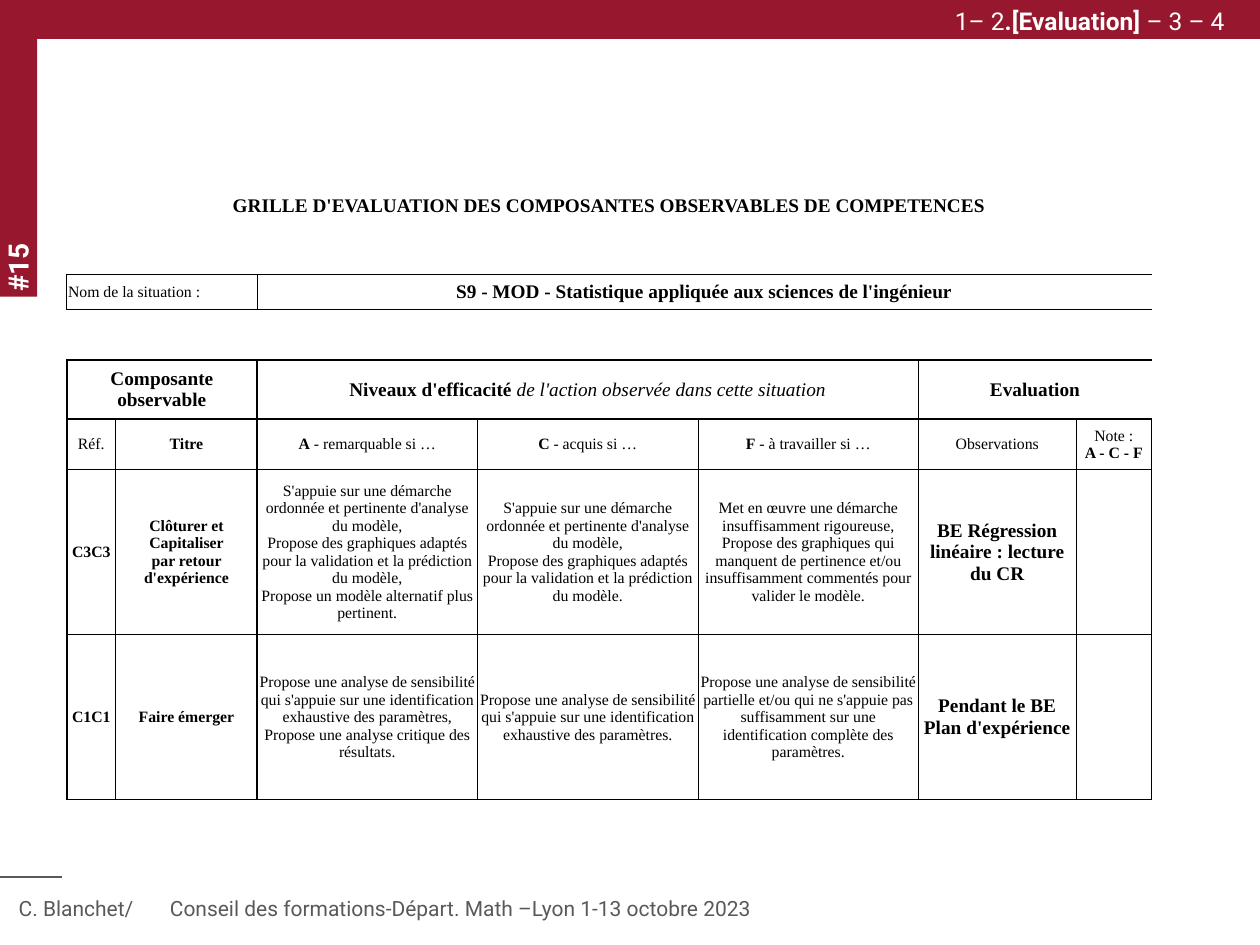
from pptx import Presentation
from pptx.dml.color import RGBColor
from pptx.enum.shapes import MSO_CONNECTOR as Line, MSO_SHAPE as Shape
from pptx.enum.text import MSO_ANCHOR as Anchor, PP_ALIGN as Align
from pptx.oxml import parse_xml
from pptx.oxml.ns import nsdecls
from pptx.util import Inches, Pt
from lxml.etree import SubElement

RED = RGBColor(0x96, 0x17, 0x2E)
GREY = RGBColor(0x59, 0x59, 0x59)
WHITE = RGBColor(0xFF, 0xFF, 0xFF)
BLACK = RGBColor(0, 0, 0)
SANS, SERIF = "Roboto", "Times New Roman"
THIN, THICK = 0.5, 0.96

# The slide is a grid of 100 columns by 75 rows
deck = Presentation()
deck.slide_width, deck.slide_height = Inches(10), Inches(7.5)
unit = deck.slide_width / 100
slide = deck.slides.add_slide(deck.slide_layouts[6])
shapes = slide.shapes


def grid(*spots):
    return [round(spot * unit) for spot in spots]


def write(para, runs, size, face, color):
    """Add (text, style) runs; style holds b for bold and i for italic."""
    for text, style in runs:
        for num, part in enumerate(text.split("\n")):
            if num:
                para.add_line_break()
            if not part:
                continue
            run = para.add_run()
            run.text = part
            font = run.font
            font.size, font.name = Pt(size), face
            font.color.rgb = color
            font.bold, font.italic = "b" in style, "i" in style


# Red bars along the top and the left edge
for place, turn in (((-0.2, 0, 100.2, 3.1), 0), ((-10.4, 10.2, 23.6, 3.1), 270)):
    bar = shapes.add_shape(Shape.RECTANGLE, *grid(*place))
    bar.rotation = turn
    bar.shadow.inherit = False
    bar.fill.solid()
    bar.fill.fore_color.rgb = RED
    bar.line.fill.background()

# Footer rule
rule = shapes.add_connector(Line.STRAIGHT, *grid(0, 69.6, 4.9, 69.6))
rule.line.color.rgb = GREY
rule.line.width = Pt(0.75)
SubElement(rule._element.spPr, "{http://schemas.openxmlformats.org/drawingml/2006/main}effectLst")

# Slide number, footer and progress line
notes = [
    ((-8.2, 12.8, 19.1, 3.6), 270, 16, WHITE, [("#15", "b")]),
    ((0.5, 70.6, 84.2, 3), 0, 12, GREY,
     [("C. Blanchet/\tConseil des formations-Départ. Math –Lyon 1-13 octobre 2023", "")]),
    ((74.8, 0, 25.2, 5.6), 0, 14, WHITE,
     [("1– 2", ""), (".[Evaluation] ", "b"), ("– 3 – 4", "")]),
]
for place, turn, size, color, runs in notes:
    box = shapes.add_textbox(*grid(*place))
    box.rotation = turn
    box.text_frame.word_wrap = True
    para = box.text_frame.paragraphs[0]
    if "\t" in runs[0][0]:
        stops = SubElement(para._p.get_or_add_pPr(), para._p.tag[:-1] + "tabLst")
        SubElement(stops, para._p.tag[:-1] + "tab", pos=str(grid(12)[0]), algn="l")
    write(para, runs, size, SANS, color)

# Table content: (row, column, columns spanned, size, runs)
sense = "Propose une analyse de sensibilité "
full = sense + "qui s'appuie sur une identification exhaustive des paramètres"
steps = "S'appuie sur une démarche ordonnée et pertinente d'analyse du modèle,\n"
plots = "Propose des graphiques adaptés pour la validation et la prédiction du modèle"
cells = [
    (0, 0, 7, 11, [("GRILLE D'EVALUATION DES COMPOSANTES OBSERVABLES DE COMPETENCES", "b")]),
    (2, 0, 2, 9, [("Nom de la situation :", "")]),
    (2, 2, 5, 11, [("S9 - MOD - Statistique appliquée aux sciences de l'ingénieur", "b")]),
    (4, 0, 2, 11, [("Composante observable", "b")]),
    (4, 2, 3, 11, [("Niveaux d'efficacité ", "b"),
                   ("de l'action observée dans cette situation", "i")]),
    (4, 5, 2, 11, [("Evaluation", "b")]),
    (5, 0, 1, 9, [("Réf.", "")]),
    (5, 1, 1, 9, [("Titre", "b")]),
    (5, 2, 1, 9, [("A", "b"), (" - remarquable si …", "")]),
    (5, 3, 1, 9, [("C", "b"), (" - acquis si …", "")]),
    (5, 4, 1, 9, [("F", "b"), (" - à travailler si …", "")]),
    (5, 5, 1, 9, [("Observations", "")]),
    (5, 6, 1, 9, [("Note :\n", ""), ("A - C - F", "b")]),
    (6, 0, 1, 9, [("C3C3", "b")]),
    (6, 1, 1, 9, [("Clôturer et Capitaliser\npar retour d'expérience", "b")]),
    (6, 2, 1, 9, [(steps + plots + ",\nPropose un modèle alternatif plus pertinent.", "")]),
    (6, 3, 1, 9, [(steps + plots + ".", "")]),
    (6, 4, 1, 9, [("Met en œuvre une démarche insuffisamment rigoureuse,\n"
                   "Propose des graphiques qui manquent de pertinence et/ou "
                   "insuffisamment commentés pour valider le modèle.", "")]),
    (6, 5, 1, 11, [("BE Régression linéaire : lecture du CR", "b")]),
    (7, 0, 1, 9, [("C1C1", "b")]),
    (7, 1, 1, 9, [("Faire émerger", "b")]),
    (7, 2, 1, 9, [(full + ",\nPropose une analyse critique des résultats.", "")]),
    (7, 3, 1, 9, [(full + ".", "")]),
    (7, 4, 1, 9, [(sense + "partielle et/ou qui ne s'appuie pas suffisamment "
                   "sur une identification complète des paramètres.", "")]),
    (7, 5, 1, 11, [("Pendant le BE Plan d'expérience", "b")]),
]

# Plain table without banding
wide = [3.9, 11.2, 17.5, 17.5, 17.5, 12.5, 6]
high = [2, 1.5, 2.4, 1.5, 3.7, 3.5, 13.1, 13.1]
frame = shapes.add_table(len(high), len(wide), *grid(5.3, 14.9, sum(wide), sum(high)))
table = frame.table
table.first_row = table.horz_banding = False
table._tbl.tblPr[0].text = "{2D5ABB26-0587-4C30-8999-92F81FD0307C}"
for col, size in zip(table.columns, grid(*wide)):
    col.width = size
for row, size in zip(table.rows, grid(*high)):
    row.height = size

# Borders: level lines by row edge, upright lines by column edge
level = {2: THIN, 3: THIN, 4: THICK, 6: THICK, 7: THIN, 8: THIN}
block = {0: THICK, 2: THICK, 5: THICK, 7: THICK}
body = {edge: block.get(edge, THIN) for edge in range(8)}
upright = {2: {0: THIN, 2: THIN, 7: THIN}, 4: block, 5: body, 6: body, 7: body}
for r in range(len(high)):
    for c in range(len(wide)):
        cell = table.cell(r, c)
        props = cell._tc.get_or_add_tcPr()
        sides = upright.get(r, {})
        edges = {"L": sides.get(c), "R": sides.get(c + 1),
                 "T": level.get(r), "B": level.get(r + 1)}
        for side, size in edges.items():
            if size:
                props.append(parse_xml(
                    f'<a:ln{side} {nsdecls("a")} w="{Pt(size)}"><a:solidFill>'
                    f'<a:srgbClr val="{BLACK}"/></a:solidFill></a:ln{side}>'))
        cell.fill.background()

# Cell text
for r, c, span, size, runs in cells:
    cell = table.cell(r, c)
    if span > 1:
        cell.merge(table.cell(r, c + span - 1))
    cell.vertical_anchor = Anchor.MIDDLE
    cell.margin_left = cell.margin_right = Inches(0.01)
    para = cell.text_frame.paragraphs[0]
    para.alignment = Align.LEFT if (r, c) == (2, 0) else Align.CENTER
    write(para, runs, size, SERIF, BLACK)

deck.save("out.pptx")
